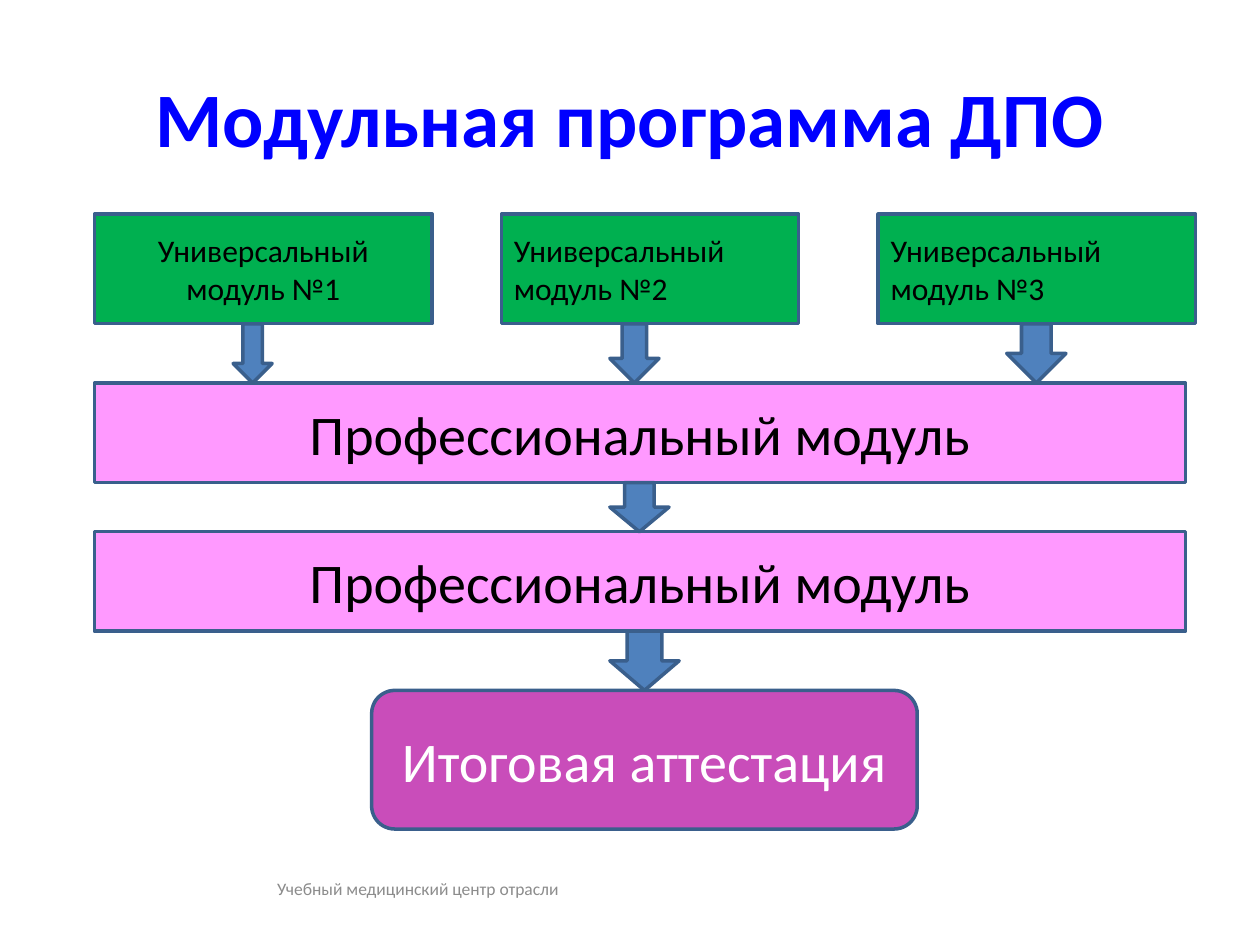
from pptx import Presentation
from pptx.dml.color import RGBColor
from pptx.enum.shapes import MSO_SHAPE as SHAPE
from pptx.enum.text import MSO_ANCHOR as ANCHOR, PP_ALIGN as ALIGN
from pptx.util import Inches, Pt

FONT = "Calibri"
COLORS = {
    "title": "0000FF",
    "footer": "8C8C8C",
    "universal": "00B050",
    "professional": "FF99FF",
    "final": "C94DBA",
    "arrow": "4F81BD",
    "outline": "3A5F8C",
    "dark": "000000",
    "light": "FFFFFF",
}


def rgb(name):
    return RGBColor.from_string(COLORS[name])


def write(tf, text, size, color, align=ALIGN.CENTER, anchor=ANCHOR.MIDDLE, bold=False):
    tf.word_wrap = True
    tf.vertical_anchor = anchor
    p = tf.paragraphs[0]
    p.alignment = align
    r = p.add_run()
    r.text = text
    r.font.name = FONT
    r.font.size = Pt(size)
    r.font.bold = bold
    r.font.color.rgb = rgb(color)


def add_title(s, text):
    sp = s.shapes.title
    sp.left, sp.top, sp.width, sp.height = (Inches(v) for v in (0.5, 0.3, 9, 1.25))
    write(sp.text_frame, text, 44, "title", bold=True)


def add_footer(s, text):
    sp = s.shapes.add_textbox(Inches(0.67), Inches(6.95), Inches(3.86), Inches(0.4))
    sp.text_frame.margin_top = Inches(0.02)
    write(sp.text_frame, text, 10, "footer", ALIGN.RIGHT, ANCHOR.TOP)


def add_block(s, kind, box, fill):
    sp = s.shapes.add_shape(kind, *(Inches(v) for v in box))
    sp.shadow.inherit = False
    sp.fill.solid()
    sp.fill.fore_color.rgb = rgb(fill)
    sp.line.color.rgb = rgb("outline")
    sp.line.width = Pt(2)
    return sp


def add_module(s, box, text, size, fill, color="dark", align=ALIGN.CENTER, kind=SHAPE.RECTANGLE):
    sp = add_block(s, kind, box, fill)
    write(sp.text_frame, text, size, color, align)


def add_arrow(s, left, width, top, bottom):
    add_block(s, SHAPE.DOWN_ARROW, (left, top, width, bottom - top), "arrow")


def main():
    prs = Presentation()
    prs.slide_width, prs.slide_height = Inches(10), Inches(7.5)
    s = prs.slides.add_slide(prs.slide_layouts[5])
    add_title(s, "Модульная программа ДПО")
    add_footer(s, "Учебный медицинский центр отрасли")

    universal = [
        (0.75, 2.68, ALIGN.CENTER),
        (3.98, 2.36, ALIGN.LEFT),
        (6.97, 2.52, ALIGN.LEFT),
    ]
    for number, (left, width, align) in enumerate(universal, 1):
        add_module(s, (left, 1.7, width, 0.87), f"Универсальный модуль №{number}",
                   18, "universal", align=align)

    for top in (3.04, 4.22):
        add_module(s, (0.75, top, 8.66, 0.79), "Профессиональный модуль", 32, "professional")

    add_module(s, (2.95, 5.48, 4.33, 1.1), "Итоговая аттестация", 32, "final",
               color="light", kind=SHAPE.ROUNDED_RECTANGLE)

    for left, width in ((1.85, 0.31), (4.84, 0.39), (7.99, 0.47)):
        add_arrow(s, left, width, 2.57, 3.04)
    add_arrow(s, 4.84, 0.47, 3.83, 4.22)
    add_arrow(s, 4.84, 0.55, 5.01, 5.48)

    prs.save("out.pptx")


if __name__ == "__main__":
    main()
